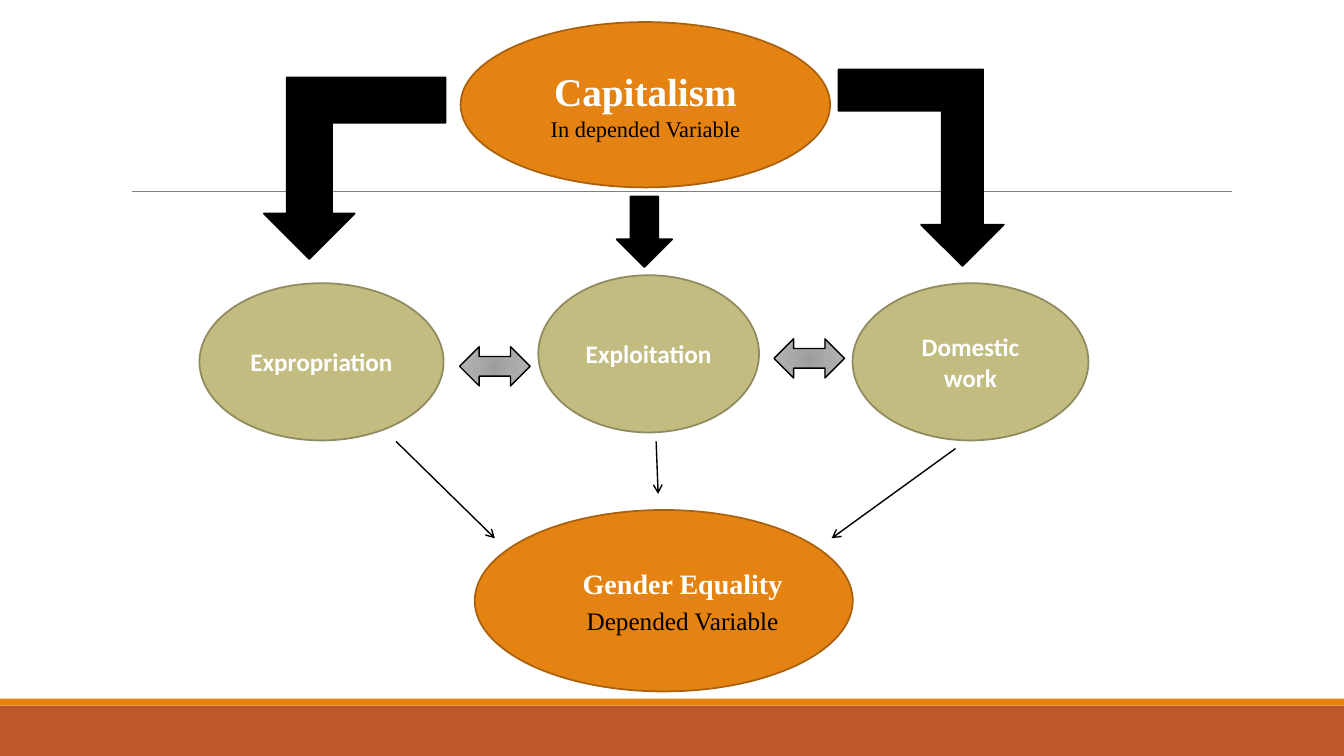
import pptx
import pptx.util
import pptx.dml.color
import pptx.enum.shapes
import pptx.enum.text
import pptx.oxml
from dataclasses import dataclass

Pt = pptx.util.Pt
SHAPE = pptx.enum.shapes.MSO_SHAPE
NS = 'xmlns:a="http://schemas.openxmlformats.org/drawingml/2006/main"'


@dataclass(frozen=True)
class Theme:
    """Colours, fonts and sizes of the slide."""
    orange: str = "E48312"
    orange_edge: str = "A9610D"
    rust: str = "BD582C"
    olive: str = "C2BC80"
    olive_edge: str = "908B5F"
    rule: str = "808080"
    black: str = "000000"
    white: str = "FFFFFF"
    grays: tuple = ((0, "9C9C9C"), (45, "AAAAAA"), (100, "B4B4B4"))
    serif: str = "Times New Roman"
    sans: str = "Calibri"
    title: int = 28
    subtitle: int = 16
    outcome: int = 20
    body: int = 18
    edge: float = 1.25
    thin: float = 1
    hairline: float = 0.5


T = Theme()


def rgb(value):
    """Turn a hex string into a colour."""
    return pptx.dml.color.RGBColor.from_string(value)


def add_block(s, kind, box, fill=None, edge=None, width=T.edge):
    """Add a preset shape with a plain fill and outline."""
    sp = s.shapes.add_shape(kind, *map(Pt, box))
    sp.shadow.inherit = False
    if fill:
        sp.fill.solid()
        sp.fill.fore_color.rgb = rgb(fill)
    if edge:
        sp.line.color.rgb = rgb(edge)
        sp.line.width = Pt(width)
    else:
        sp.line.fill.background()
    return sp


def add_line(s, start, end, color, width, arrow=False):
    """Add a straight line, with an open arrowhead if asked."""
    cx = s.shapes.add_connector(
        pptx.enum.shapes.MSO_CONNECTOR.STRAIGHT, *map(Pt, start + end))
    cx.line.color.rgb = rgb(color)
    cx.line.width = Pt(width)
    if arrow:
        cx.line._get_or_add_ln().append(
            pptx.oxml.parse_xml(f'<a:tailEnd {NS} type="arrow"/>'))
    cx._element.spPr.append(pptx.oxml.parse_xml(f'<a:effectLst {NS}/>'))


def add_oval(s, box, fill, edge, lines, indent=0, before=0):
    """Add an ellipse with centred lines of text."""
    sp = add_block(s, SHAPE.OVAL, box, fill, edge)
    tf = sp.text_frame
    tf.word_wrap = True
    tf.vertical_anchor = pptx.enum.text.MSO_ANCHOR.MIDDLE
    for i, (text, color, fmt) in enumerate(lines):
        p = tf.paragraphs[0] if i == 0 else tf.add_paragraph()
        p.alignment = pptx.enum.text.PP_ALIGN.CENTER
        if indent:
            p._p.get_or_add_pPr().set("marL", str(Pt(indent)))
            p.space_before = Pt(before)
        r = p.add_run()
        r.text = text
        r.font.color.rgb = rgb(color)
        for name, value in fmt.items():
            setattr(r.font, name, value)


def add_variable(s, box, name, role, sizes, indent=0, before=0):
    """Add an orange oval naming a variable and its role."""
    lines = [
        (text, color, {"size": Pt(size), "name": T.serif, "bold": bold})
        for text, color, size, bold in zip(
            (name, role), (T.white, T.black), sizes, (True, False))]
    add_oval(s, box, T.orange, T.orange_edge, lines, indent, before)


def add_bent_arrow(s, box, mirrored=False):
    """Add a black arrow that bends downwards."""
    sp = add_block(s, SHAPE.BENT_UP_ARROW, box, T.black, T.black)
    xfrm = sp._element.spPr.xfrm
    xfrm.set("flipV", "1")
    if mirrored:
        xfrm.set("flipH", "1")


def add_exchange(s, box):
    """Add a gray two-way arrow shaded from its centre."""
    sp = add_block(s, SHAPE.LEFT_RIGHT_ARROW, box, None, T.black, T.thin)
    stops = "".join(
        f'<a:gs pos="{pos * 1000}"><a:srgbClr val="{c}"/></a:gs>'
        for pos, c in T.grays)
    sp._element.spPr.prstGeom.addnext(pptx.oxml.parse_xml(
        f'<a:gradFill {NS}><a:gsLst>{stops}</a:gsLst><a:path path="circle">'
        '<a:fillToRect l="50000" t="50000" r="50000" b="50000"/>'
        '</a:path></a:gradFill>'))


def add_frame(s, box):
    """Draw the footer bands and the hairline."""
    x, y, w, h = box
    band, strip = 36, 5
    add_block(s, SHAPE.RECTANGLE, (x, y + h - band, w, band), T.rust)
    add_block(s, SHAPE.RECTANGLE,
              (x, y + h - band - strip, w, strip), T.orange)
    add_line(s, (x + 94.3, y + 136.8), (x + 879.8, y + 136.8),
             T.rule, T.hairline)


def add_cause(s, box):
    """Draw the independent variable and its three black arrows."""
    x, y, w, h = box
    add_variable(s, (x + 186.5, y, 264, h), "Capitalism",
                 "In depended Variable", (T.title, T.subtitle))
    add_block(s, SHAPE.DOWN_ARROW, (x + 298, y + 124.6, 39.6, 50.4),
              T.black, T.black)
    add_bent_arrow(s, (x + 456.5, y + 33.8, 118, 140.4))
    add_bent_arrow(s, (x + 46.1, y + 39.6, 129.6, 129.6), mirrored=True)


def add_mechanisms(s, box):
    """Draw the three olive ovals and the two-way arrows between them."""
    x, y, w, h = box
    raised = 5.7
    ovals = (("Expropriation", 0, 174.4, raised),
             ("Exploitation", 242, 157.7, 0),
             ("Domestic work", 466.5, 168.5, raised))
    fmt = {"size": Pt(T.body), "name": T.sans, "bold": True}
    for text, dx, width, dy in ovals:
        add_oval(s, (x + dx, y + dy, width, h - raised), T.olive,
                 T.olive_edge, [(text, T.white, fmt)])
    for dx, dy in ((185.8, 51.1), (410.4, 45.4)):
        add_exchange(s, (x + dx, y + dy, 50.4, 28))


def add_outcome(s, box):
    """Draw the dependent variable and the thin arrows leading to it."""
    x, y, w, h = box
    add_variable(s, box, "Gender Equality", "Depended Variable",
                 (T.outcome, T.body), indent=27, before=4)
    arrows = (((-56.2, -49), (14.4, 20.2)),
              ((129.6, -49), (131, -11.5)),
              ((343.4, -43.9), (254.9, 20.2)))
    for (x1, y1), (x2, y2) in arrows:
        add_line(s, (x + x1, y + y1), (x + x2, y + y2),
                 T.black, T.thin, arrow=True)


def main():
    """Build the slide and save it."""
    prs = pptx.Presentation()
    prs.slide_width, prs.slide_height = Pt(960), Pt(540)
    s = prs.slides.add_slide(prs.slide_layouts[6])
    add_frame(s, (0, 0, 960, 540))
    add_cause(s, (142.5, 15.8, 635, 118.1))
    add_mechanisms(s, (142.5, 196.6, 635, 118))
    add_outcome(s, (339.1, 364.3, 270, 129.6))
    prs.save("out.pptx")


if __name__ == "__main__":
    main()
